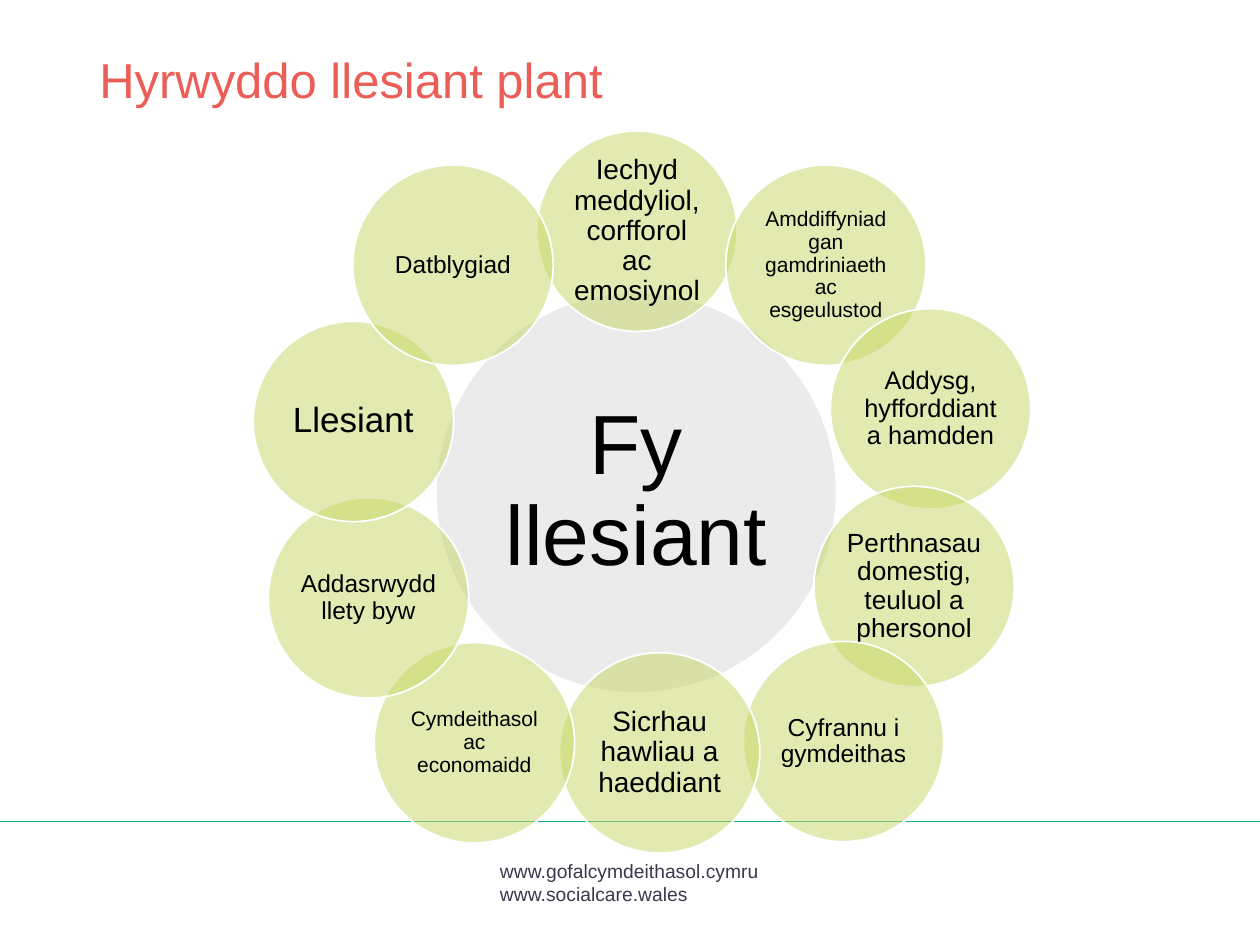
from typing import NamedTuple

import pptx
import pptx.dml.color
import pptx.enum.shapes
import pptx.enum.text
import pptx.util
from lxml import etree
from pptx.oxml.ns import qn
from pptx.util import Inches

RGBColor = pptx.dml.color.RGBColor
CORAL = RGBColor(0xEB, 0x5E, 0x57)
TEAL = RGBColor(0x16, 0xAD, 0x85)
SLATE = RGBColor(0x37, 0x39, 0x4C)
LIME = RGBColor(0xC9, 0xD7, 0x65)
GREY = RGBColor(0xD9, 0xD9, 0xD9)
BLACK = RGBColor(0, 0, 0)
WHITE = RGBColor(0xFF, 0xFF, 0xFF)

FONT = "Arial"
PETAL_SIZE = 1.59
HUB_SIZE = 2 * PETAL_SIZE


class Circle(NamedTuple):
    left: float
    top: float
    text: str
    font_size: float
    diameter: float = PETAL_SIZE
    color: RGBColor = LIME
    inset: float = 0.02


CIRCLES = [
    Circle(3.46, 2.32, "Fy llesiant", 48, HUB_SIZE, GREY, 0.07),
    Circle(4.26, 1.04, "Iechyd meddyliol, corfforol ac emosiynol", 16),
    Circle(5.76, 1.31, "Amddiffyniad gan gamdriniaeth ac esgeulustod", 12),
    Circle(6.59, 2.45, "Addysg, hyfforddiant a hamdden", 14.5),
    Circle(6.46, 3.86, "Perthnasau domestig, teuluol a phersonol", 15),
    Circle(5.9, 5.09, "Cyfrannu i gymdeithas", 14),
    Circle(4.44, 5.18, "Sicrhau hawliau a haeddiant", 16),
    Circle(2.97, 5.1, "Cymdeithasol ac economaidd", 12),
    Circle(2.13, 3.95, "Addasrwydd llety byw", 14),
    Circle(2.01, 2.55, "Llesiant", 20, inset=0.03),
    Circle(2.8, 1.31, "Datblygiad", 14),
]


def style_paragraph(paragraph, size: float, color: RGBColor) -> None:
    paragraph.font.name = FONT
    paragraph.font.size = pptx.util.Pt(size)
    paragraph.font.color.rgb = color


def add_text(slide, left: float, top: float, width: float, height: float,
             lines: list[str], size: float, color: RGBColor,
             spacing: float = 1.0) -> None:
    frame = slide.shapes.add_textbox(
        Inches(left), Inches(top), Inches(width), Inches(height)).text_frame
    frame.word_wrap = True
    frame.text = "\n".join(lines)
    for paragraph in frame.paragraphs:
        paragraph.line_spacing = spacing
        style_paragraph(paragraph, size, color)


def add_circle(slide, circle: Circle) -> None:
    """Draw a half-transparent circle with its label centred inside."""
    diameter = Inches(circle.diameter)
    oval = slide.shapes.add_shape(
        pptx.enum.shapes.MSO_SHAPE.OVAL,
        Inches(circle.left), Inches(circle.top), diameter, diameter)
    oval.shadow.inherit = False
    oval.fill.solid()
    oval.fill.fore_color.rgb = circle.color
    fill_color = oval._element.spPr.find(qn("a:solidFill")).find(qn("a:srgbClr"))
    etree.SubElement(fill_color, qn("a:alpha")).set("val", "50000")
    oval.line.color.rgb = WHITE
    oval.line.width = pptx.util.Pt(1)

    frame = oval.text_frame
    frame.word_wrap = True
    frame.vertical_anchor = pptx.enum.text.MSO_ANCHOR.MIDDLE
    frame.margin_left = frame.margin_right = Inches(circle.inset)
    frame.margin_top = frame.margin_bottom = Inches(circle.inset)
    frame.text = circle.text
    label = frame.paragraphs[0]
    label.alignment = pptx.enum.text.PP_ALIGN.CENTER
    label.line_spacing = 0.9
    style_paragraph(label, circle.font_size, BLACK)


def add_footer_rule(slide) -> None:
    rule = slide.shapes.add_connector(
        pptx.enum.shapes.MSO_CONNECTOR.STRAIGHT,
        Inches(0), Inches(6.52), Inches(10), Inches(6.52))
    rule.line.color.rgb = TEAL
    rule.line.width = pptx.util.Pt(1)
    etree.SubElement(rule._element.spPr, qn("a:effectLst"))


def main() -> None:
    deck = pptx.Presentation()
    deck.slide_width = Inches(10)
    deck.slide_height = Inches(7.5)
    slide = deck.slides.add_slide(deck.slide_layouts[6])

    add_text(slide, 3.87, 6.77, 2.26, 0.46,
             ["www.gofalcymdeithasol.cymru", "www.socialcare.wales"], 11, SLATE)
    add_footer_rule(slide)
    for circle in CIRCLES:
        add_circle(slide, circle)
    add_text(slide, 0.69, 0.4, 5.77, 1.13,
             ["Hyrwyddo llesiant plant"], 28, CORAL, spacing=0.9)

    deck.save("out.pptx")


if __name__ == "__main__":
    main()
